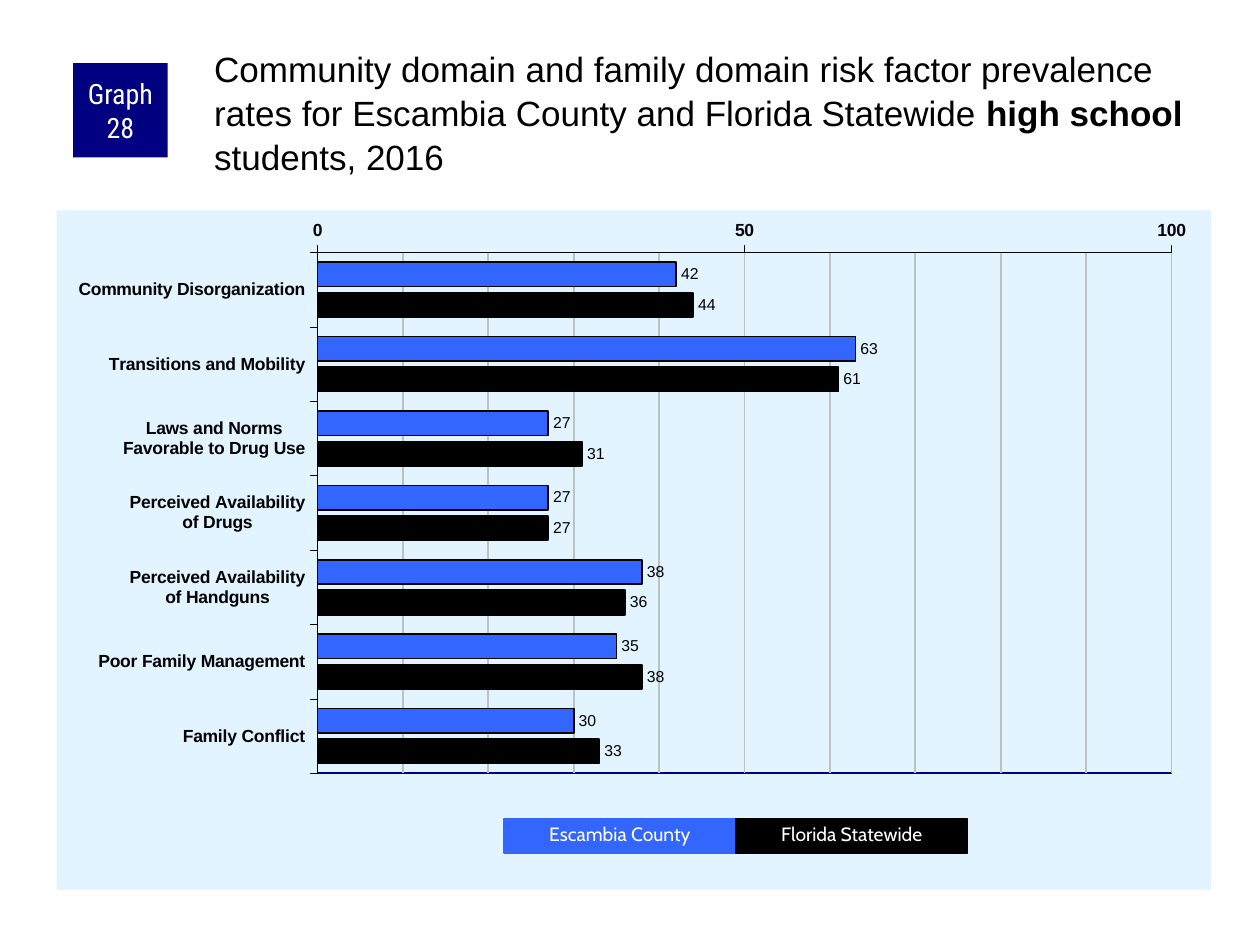
from lxml.etree import fromstring
from pptx import Presentation
from pptx.chart.data import CategoryChartData
from pptx.dml.color import RGBColor
from pptx.enum.chart import (XL_AXIS_CROSSES, XL_CHART_TYPE, XL_LABEL_POSITION,
                             XL_TICK_MARK)
from pptx.enum.shapes import MSO_SHAPE
from pptx.enum.text import MSO_ANCHOR, MSO_AUTO_SIZE, PP_ALIGN
from pptx.oxml.ns import nsdecls, qn
from pptx.util import Inches, Pt

HUES = {"ink": "000000", "white": "FFFFFF", "navy": "000080",
        "blue": "3366FF", "pale": "E1F4FF", "grid": "C0C0C0"}
CATS = ["Community Disorganization", "Transitions and Mobility",
        "Laws and Norms\nFavorable to Drug Use",
        "Perceived Availability\nof Drugs",
        "Perceived Availability\nof Handguns",
        "Poor Family Management", "Family Conflict"]
AREAS = [("Escambia County", "blue", (42, 63, 27, 27, 38, 35, 30)),
         ("Florida Statewide", "ink", (44, 61, 31, 27, 36, 38, 33))]
PLOT = {"x": 0.226, "y": 0.062, "w": 0.74, "h": 0.767}


def hue(name):
    return RGBColor.from_string(HUES[name])


def style(font, size, name="ink", face="Arial", bold=False):
    font.size, font.name, font.bold = Pt(size), face, bold
    font.color.rgb = hue(name)


def stroke(line, name, width):
    line.color.rgb = hue(name)
    line.width = Pt(width)


def add_title(slide, parts):
    title = slide.shapes.title
    title.left, title.top = Inches(1.67), Inches(0.33)
    title.width, title.height = Inches(7.92), Inches(0.83)
    frame = title.text_frame
    frame.word_wrap, frame.auto_size = True, MSO_AUTO_SIZE.NONE
    frame.vertical_anchor = MSO_ANCHOR.TOP
    frame.margin_left = frame.margin_top = Inches(0.03)
    frame.margin_right = frame.margin_bottom = 0
    para = frame.paragraphs[0]
    para.alignment, para.line_spacing = PP_ALIGN.LEFT, 1.05
    for text, bold in parts:
        run = para.add_run()
        run.text = text
        style(run.font, 20, bold=bold)


def add_box(slide, spot, fill, text, size, face):
    box = slide.shapes.add_shape(MSO_SHAPE.RECTANGLE, *map(Inches, spot))
    box.shadow.inherit = False
    box.fill.solid()
    box.fill.fore_color.rgb = hue(fill)
    box.line.fill.background()
    frame = box.text_frame
    frame.word_wrap, frame.vertical_anchor = True, MSO_ANCHOR.MIDDLE
    para = frame.paragraphs[0]
    para.alignment = PP_ALIGN.CENTER
    run = para.add_run()
    run.text = text
    style(run.font, size, "white", face)
    return box


def add_badge(slide):
    box = add_box(slide, (0.58, 0.5, 0.75, 0.75), "navy", "Graph 28",
                  16, "Roboto Condensed")
    frame = box.text_frame
    frame.margin_left = frame.margin_right = Inches(0.05)
    frame.margin_top = frame.margin_bottom = 0


def add_key(slide):
    wide = 1.84
    for col, (name, fill, _) in enumerate(AREAS):
        box = add_box(slide, (4 + col * wide, 6.5, wide, 0.27), fill, name,
                      11, "Cabin")
        stroke(box.line, fill, 0.75)
        box.text_frame.vertical_anchor = MSO_ANCHOR.TOP
        box.text_frame.auto_size = MSO_AUTO_SIZE.SHAPE_TO_FIT_TEXT
        box.text_frame.paragraphs[0].line_spacing = 0.9


def solid(name):
    return f'<a:solidFill><a:srgbClr val="{HUES[name]}"/></a:solidFill>'


def ruled(name):
    return f'<a:ln w="{Pt(1)}">{solid(name)}</a:ln>'


def chart_part(tag, body):
    return fromstring(f'<c:{tag} {nsdecls("c", "a")}>{body}</c:{tag}>')


def paint_areas(chart):
    """Fill the chart, frame the plot and fix the plot's inner place."""
    root = chart._chartSpace.find(qn("c:chart"))
    root.addnext(chart_part(
        "spPr", solid("pale") + "<a:ln><a:noFill/></a:ln>"))
    plot = root.find(qn("c:plotArea"))
    for old in plot.findall(qn("c:layout")):
        plot.remove(old)
    modes = '<c:xMode val="edge"/><c:yMode val="edge"/>'
    sizes = "".join(f'<c:{k} val="{v}"/>' for k, v in PLOT.items())
    plot.insert(0, chart_part(
        "layout", '<c:manualLayout><c:layoutTarget val="inner"/>'
        f"{modes}{sizes}</c:manualLayout>"))
    plot.append(chart_part("spPr", "<a:noFill/>" + ruled("navy")))


def set_axes(chart):
    cat, val = chart.category_axis, chart.value_axis
    for axis in (cat, val):
        style(axis.tick_labels.font, 10, bold=True)
        stroke(axis.format.line, "ink", 0.25)
        axis.major_tick_mark = XL_TICK_MARK.OUTSIDE
        axis.minor_tick_mark = XL_TICK_MARK.NONE
    cat.reverse_order, cat.crosses = True, XL_AXIS_CROSSES.MAXIMUM
    val.minimum_scale, val.maximum_scale = 0, 100
    val.major_unit, val.minor_unit = 50, 10
    val.has_major_gridlines = val.has_minor_gridlines = True
    stroke(val.major_gridlines.format.line, "grid", 1)
    minor = val._element.find(qn("c:minorGridlines"))
    minor.append(chart_part("spPr", ruled("grid")))


def add_bars(slide):
    data = CategoryChartData()
    data.categories = CATS
    for name, _, vals in AREAS:
        data.add_series(name, vals)
    chart = slide.shapes.add_chart(
        XL_CHART_TYPE.BAR_CLUSTERED,
        *map(Inches, (0.45, 1.67, 9.16, 5.39)), data).chart
    style(chart.font, 11.8)
    chart.has_title = chart.has_legend = False
    plot = chart.plots[0]
    plot.gap_width, plot.overlap, plot.vary_by_categories = 80, -25, False
    for series, (_, fill, _) in zip(plot.series, AREAS):
        series.format.fill.solid()
        series.format.fill.fore_color.rgb = hue(fill)
        stroke(series.format.line, "ink", 1)
        labels = series.data_labels
        labels.show_value, labels.position = True, XL_LABEL_POSITION.OUTSIDE_END
        style(labels.font, 9)
    set_axes(chart)
    paint_areas(chart)


def main():
    deck = Presentation()
    deck.slide_width, deck.slide_height = Inches(10), Inches(7.5)
    slide = deck.slides.add_slide(deck.slide_layouts[5])
    add_bars(slide)
    add_badge(slide)
    add_title(slide, [
        ("Community domain and family domain risk factor prevalence rates "
         "for Escambia County and Florida Statewide ", False),
        ("high school", True), (" students, 2016", False)])
    add_key(slide)
    deck.save("out.pptx")


if __name__ == "__main__":
    main()
